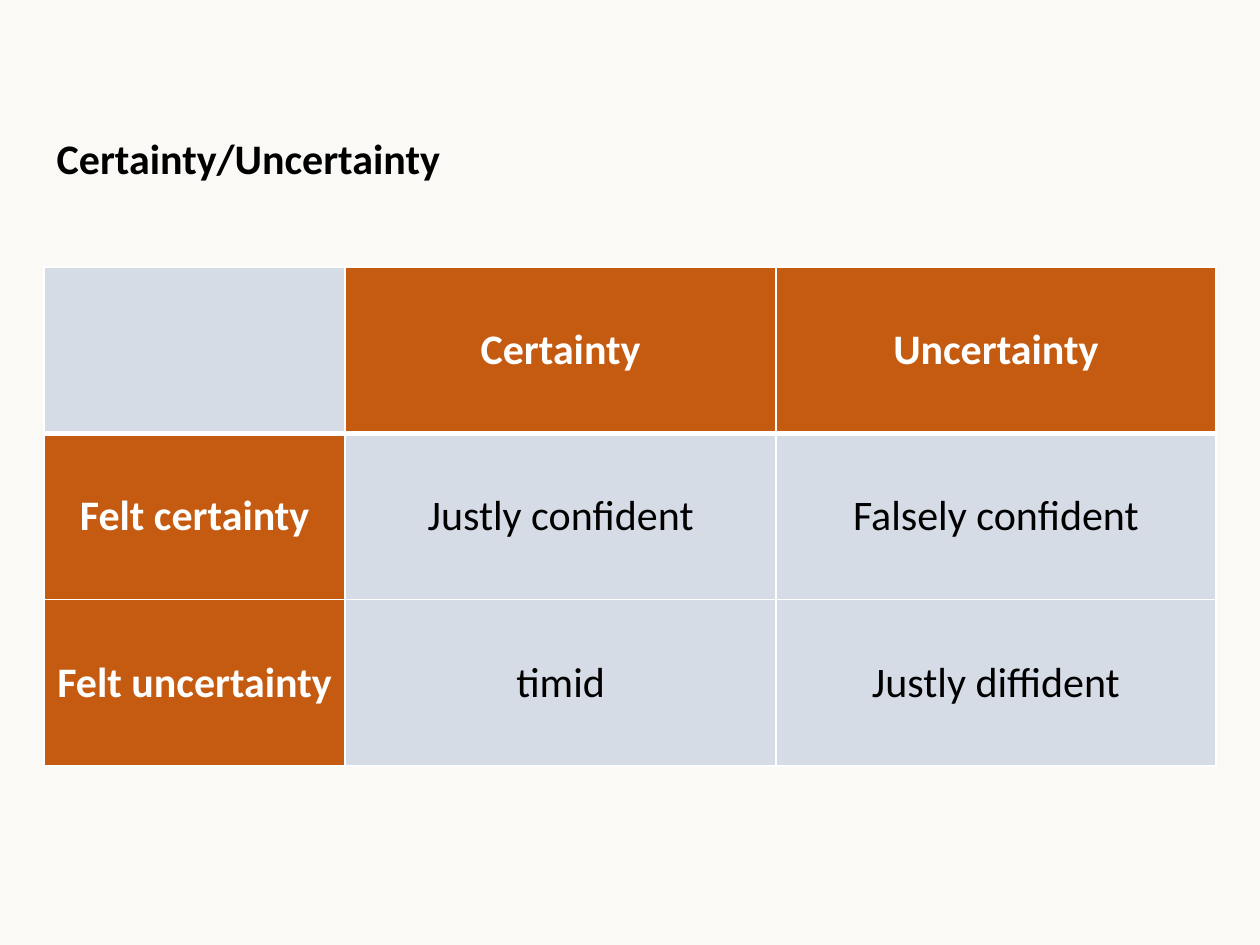
from lxml import etree
from pptx import Presentation
from pptx.dml.color import RGBColor
from pptx.enum.text import MSO_ANCHOR, PP_ALIGN
from pptx.oxml.ns import qn
from pptx.util import Inches, Pt

MIDDLE, TOP = MSO_ANCHOR.MIDDLE, MSO_ANCHOR.TOP
CENTER, LEFT = PP_ALIGN.CENTER, PP_ALIGN.LEFT
COLORS = {"back": "FAF9F5", "head": "C55A11", "body": "D6DCE5",
          "white": "FFFFFF", "black": "000000"}


def style(para, align, color, bold):
    para.alignment = align
    for run in para.runs:
        run.font.name = "Calibri"
        run.font.size = Pt(24)
        run.font.bold = bold
        run.font.color.rgb = RGBColor.from_string(COLORS[color])


def border(cell, side, width):
    line = etree.SubElement(cell._tc.get_or_add_tcPr(), qn(f"a:{side}"),
                            w=str(Pt(width)))
    fill = etree.SubElement(line, qn("a:solidFill"))
    etree.SubElement(fill, qn("a:srgbClr"), val=COLORS["white"])


# Slide and background
deck = Presentation()
deck.slide_width, deck.slide_height = Inches(10), Inches(7.5)
slide = deck.slides.add_slide(deck.slide_layouts[5])
back = slide.background.fill
back.solid()
back.fore_color.rgb = RGBColor.from_string(COLORS["back"])

# Title
title = slide.shapes.title
title.left, title.top = Inches(0.35), Inches(1)
title.width, title.height = Inches(7.6), Inches(0.5)
frame = title.text_frame
frame.text = "Certainty/Uncertainty"
frame.vertical_anchor = TOP
style(frame.paragraphs[0], LEFT, "black", True)

# Table of actual against felt certainty
rows = [
    ["", "Certainty", "Uncertainty"],
    ["Felt certainty", "Justly confident", "Falsely confident"],
    ["Felt uncertainty", "timid", "Justly diffident"],
]
widths = [2.39, 3.42, 3.49]
table = slide.shapes.add_table(3, 3, Inches(0.35), Inches(2.12),
                               Inches(9.3), Inches(3.96)).table
for col, width in zip(table.columns, widths):
    col.width = Inches(width)

for r, row in enumerate(rows):
    for c, text in enumerate(row):
        cell = table.cell(r, c)
        head = (r == 0) != (c == 0)
        cell.text = text
        cell.vertical_anchor = MIDDLE
        style(cell.text_frame.paragraphs[0], CENTER,
              "white" if head else "black", head)
        for side in ("lnL", "lnR", "lnT", "lnB"):
            rule = (r, side) in ((0, "lnB"), (1, "lnT"))
            border(cell, side, 3 if rule else 1)
        cell.fill.solid()
        cell.fill.fore_color.rgb = RGBColor.from_string(
            COLORS["head" if head else "body"])

deck.save("out.pptx")
